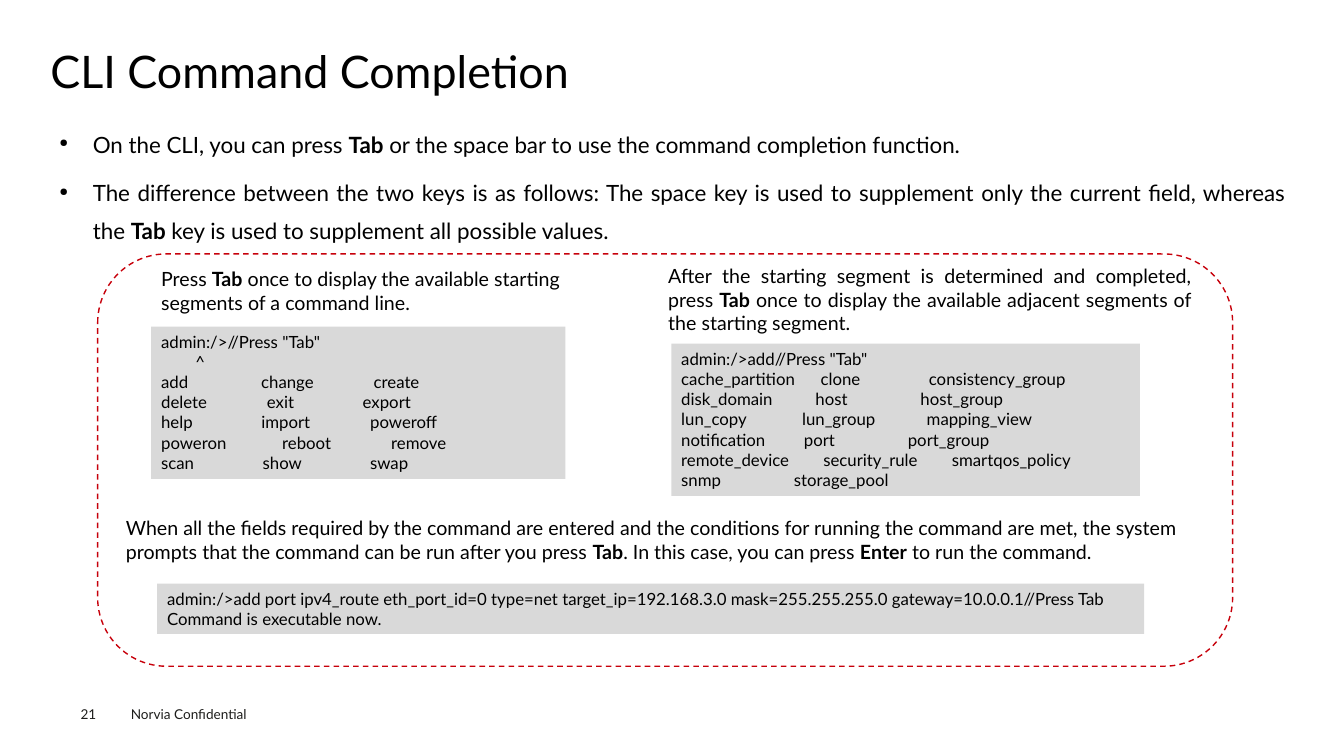
from lxml.etree import SubElement
from pptx import Presentation
from pptx.dml.color import RGBColor
from pptx.enum.dml import MSO_LINE_DASH_STYLE as Dash
from pptx.enum.shapes import MSO_SHAPE as Shape
from pptx.enum.text import MSO_ANCHOR as Anchor, PP_ALIGN as Align
from pptx.oxml.ns import qn
from pptx.util import Pt

FONT = "Lato"
BLACK = RGBColor(0x00, 0x00, 0x00)
FOOTER_GRAY = RGBColor(0x1D, 0x1D, 0x1B)
CODE_GRAY = RGBColor(0xD9, 0xD9, 0xD9)
FRAME_RED = RGBColor(0xC7, 0x00, 0x0B)

# Words between asterisks are bold.
TITLE = "CLI Command Completion"
BULLETS = [
    "On the CLI, you can press *Tab* or the space bar to use the command completion function.",
    "The difference between the two keys is as follows: The space key is used to supplement "
    "only the current field, whereas the *Tab* key is used to supplement all possible values.",
]
FOOTERS = [
    ("Norvia Confidential", (86.4, 500.4, 115.2, 19.4), (7.2, 3.6)),
    ("21", (57.6, 504, 39.6, 11.5), (0, 0)),
]
CAPTIONS = [
    ("After the starting segment is determined and completed, press *Tab* once to display "
     "the available adjacent segments of the starting segment.",
     (470.2, 185, 388.1, 58.3), Align.JUSTIFY),
    ("When all the fields required by the command are entered and the conditions for running "
     "the command are met, the system prompts that the command can be run after you press "
     "*Tab*. In this case, you can press *Enter* to run the command.",
     (82.8, 365, 774.7, 58.3), Align.LEFT),
    ("Press *Tab* once to display the available starting segments of a command line.",
     (108, 187.2, 306.7, 41), Align.LEFT),
]
FRAME = (69.8, 181.4, 810.7, 294.5)

START_SEGMENTS = [
    ("add", "change", "create"),
    ("delete", "exit", "export"),
    ("help", "import", "poweroff"),
    ("poweron", "reboot", "remove"),
    ("scan", "show", "swap"),
]
ADJACENT_SEGMENTS = [
    ("cache_partition", "clone", "consistency_group"),
    ("disk_domain", "host", "host_group"),
    ("lun_copy", "lun_group", "mapping_view"),
    ("notification", "port", "port_group"),
    ("remote_device", "security_rule", "smartqos_policy"),
    ("snmp", "storage_pool"),
]


def terminal_columns(rows, width):
    """Pad each word to the column width, as the terminal prints it."""
    return ["".join(word.ljust(width) for word in row).rstrip() for row in rows]


CONSOLES = [
    (['admin:/>//Press "Tab"', "        ^", *terminal_columns(START_SEGMENTS, 20)],
     (108, 233.3, 295.9, 108.7)),
    (['admin:/>add//Press "Tab"', *terminal_columns(ADJACENT_SEGMENTS, 21)],
     (479.5, 245.5, 334.8, 108.7)),
    (["admin:/>add port ipv4_route eth_port_id=0 type=net target_ip=192.168.3.0 "
      "mask=255.255.255.0 gateway=10.0.0.1//Press Tab",
      "Command is executable now."],
     (112.3, 416.9, 704.9, 36)),
]


def write(shape, lines, size, color=BLACK, align=Align.LEFT, margins=(7.2, 3.6), bulleted=False):
    """Fill a shape with one paragraph per line; margins are (sides, top and bottom)."""
    frame = shape.text_frame
    frame.word_wrap = True
    frame.vertical_anchor = Anchor.TOP
    frame.margin_left = frame.margin_right = Pt(margins[0])
    frame.margin_top = frame.margin_bottom = Pt(margins[1])
    for index, line in enumerate(lines):
        paragraph = frame.add_paragraph() if index else frame.paragraphs[0]
        paragraph.alignment = align
        if bulleted:
            paragraph.line_spacing = 1.4
            if index:
                paragraph.space_before = Pt(7.9)
            add_bullet(paragraph)
        paragraph.font.name = FONT
        paragraph.font.size = Pt(size)
        paragraph.font.color.rgb = color
        for part, words in enumerate(line.split("*")):
            run = paragraph.add_run()
            run.text = words
            if part % 2:
                run.font.bold = True


def add_bullet(paragraph):
    properties = paragraph._p.get_or_add_pPr()
    properties.set("marL", str(Pt(23.8)))
    properties.set("indent", str(-Pt(23.8)))
    SubElement(properties, qn("a:buSzPct")).set("val", "50000")
    SubElement(properties, qn("a:buChar")).set("char", "●")


def add_text(slide, box, lines, size, **style):
    shape = slide.shapes.add_textbox(*map(Pt, box))
    write(shape, lines, size, **style)
    return shape


def add_plain_shape(slide, kind, box):
    shape = slide.shapes.add_shape(kind, *map(Pt, box))
    shape.shadow.inherit = False
    return shape


def main():
    presentation = Presentation()
    presentation.slide_width, presentation.slide_height = Pt(960), Pt(540)
    slide = presentation.slides.add_slide(presentation.slide_layouts[6])

    for text, box, margins in FOOTERS:
        add_text(slide, box, [text], 9.7, color=FOOTER_GRAY, margins=margins)

    title = add_text(slide, (36, 35.3, 889.2, 38.9), [TITLE], 32, margins=(0, 0))
    title.text_frame.paragraphs[0].line_spacing = 0.9
    add_text(slide, (36, 82.8, 889.2, 383.8), BULLETS, 16,
             align=Align.JUSTIFY, margins=(6.5, 2.9), bulleted=True)

    frame = add_plain_shape(slide, Shape.ROUNDED_RECTANGLE, FRAME)
    frame.fill.background()
    frame.line.color.rgb = FRAME_RED
    frame.line.width = Pt(1)
    frame.line.dash_style = Dash.DASH

    for text, box, align in CAPTIONS:
        add_text(slide, box, [text], 14, align=align)

    for lines, box in CONSOLES:
        console = add_plain_shape(slide, Shape.RECTANGLE, box)
        console.fill.solid()
        console.fill.fore_color.rgb = CODE_GRAY
        console.line.fill.background()
        write(console, lines, 12)

    presentation.save("out.pptx")


if __name__ == "__main__":
    main()
